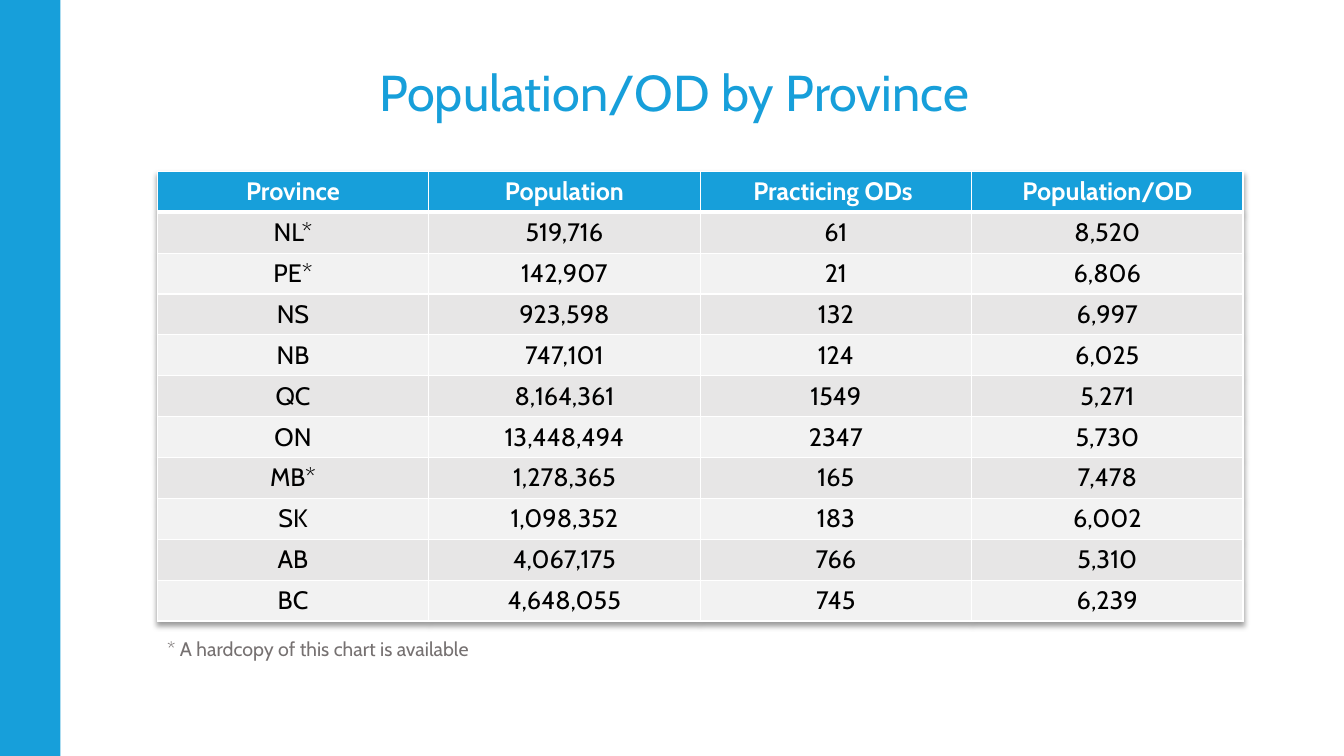
from lxml import etree
from pptx import Presentation
from pptx.dml.color import RGBColor
from pptx.enum import shapes, text
from pptx.oxml import parse_xml
from pptx.oxml.ns import nsdecls
from pptx.util import Inches, Pt

# Content
TITLE = "Population/OD by Province"
NOTE = "* A hardcopy of this chart is available"
ROWS = [
    ("Province", "Population", "Practicing ODs ", "Population/OD"),
    ("NL*", "519,716", "61", "8,520"),
    ("PE*", "142,907", "21", "6,806"),
    ("NS", "923,598", "132", "6,997"),
    ("NB", "747,101", "124", "6,025"),
    ("QC", "8,164,361", "1549", "5,271"),
    ("ON", "13,448,494", "2347", "5,730"),
    ("MB*", "1,278,365", "165", "7,478"),
    ("SK", "1,098,352", "183", "6,002"),
    ("AB", "4,067,175", "766", "5,310"),
    ("BC", "4,648,055", "745", "6,239"),
]
BLUE, WHITE, BLACK, GREY = "179FDA", "FFFFFF", "000000", "767171"
BANDS = ("F2F2F2", "E7E6E6")
TABLE_BOX = (1.56, 1.7, 10.77, 4.46)


def rgb(value):
    return RGBColor.from_string(value)


def paint(shape, color):
    shape.fill.solid()
    shape.fill.fore_color.rgb = rgb(color)


def write(tf, words, color, align=text.PP_ALIGN.LEFT, **style):
    p = tf.paragraphs[0]
    p.alignment = align
    r = p.add_run()
    r.text = words
    r.font.color.rgb = rgb(color)
    for name, value in {"name": "Cabin", "bold": False, **style}.items():
        setattr(r.font, name, value)


def add_borders(cell, bottom):
    tcPr = cell._tc.get_or_add_tcPr()
    widths = {"lnL": 1, "lnR": 1, "lnT": 1, "lnB": bottom}
    for i, (tag, width) in enumerate(widths.items()):
        tcPr.insert(i, parse_xml(
            f'<a:{tag} {nsdecls("a")} w="{Pt(width)}"><a:solidFill>'
            f'<a:srgbClr val="{WHITE}"/></a:solidFill></a:{tag}>'))


prs = Presentation()
prs.slide_width, prs.slide_height = Inches(13.33), Inches(7.5)
s = prs.slides.add_slide(prs.slide_layouts[5])

# Table with a soft shadow
left, top, width, height = map(Inches, TABLE_BOX)
table = s.shapes.add_table(len(ROWS), len(ROWS[0]), left, top, width, height).table
table._tbl.tblPr.insert(0, parse_xml(
    f'<a:effectLst {nsdecls("a")}><a:outerShdw blurRad="50800" dist="38100" dir="5400000" '
    'algn="t" rotWithShape="0"><a:srgbClr val="000000"><a:alpha val="40000"/></a:srgbClr>'
    '</a:outerShdw></a:effectLst>'))
for i, row in enumerate(ROWS):
    header = i == 0
    for j, words in enumerate(row):
        cell = table.cell(i, j)
        paint(cell, BLUE if header else BANDS[i % 2])
        add_borders(cell, 3 if header else 1)
        write(cell.text_frame, words, WHITE if header else BLACK,
              text.PP_ALIGN.CENTER, size=Pt(18), bold=header)

# Title
title = s.shapes.title
title.left, title.top, title.width, title.height = map(Inches, (3.66, 0.55, 6.58, 0.71))
tf = title.text_frame
tf.vertical_anchor = text.MSO_ANCHOR.MIDDLE
write(tf, TITLE, BLUE, size=Pt(36))

# Side band
band = s.shapes.add_shape(shapes.MSO_SHAPE.RECTANGLE, 0, 0, Inches(0.6), prs.slide_height)
band.shadow.inherit = False
paint(band, BLUE)
band.line.fill.background()

# Footnote
note = s.shapes.add_textbox(left, Inches(6.27), Inches(3.41), Inches(0.34))
note.text_frame.word_wrap = True
write(note.text_frame, NOTE, GREY, size=Pt(14))

prs.save("out.pptx")
